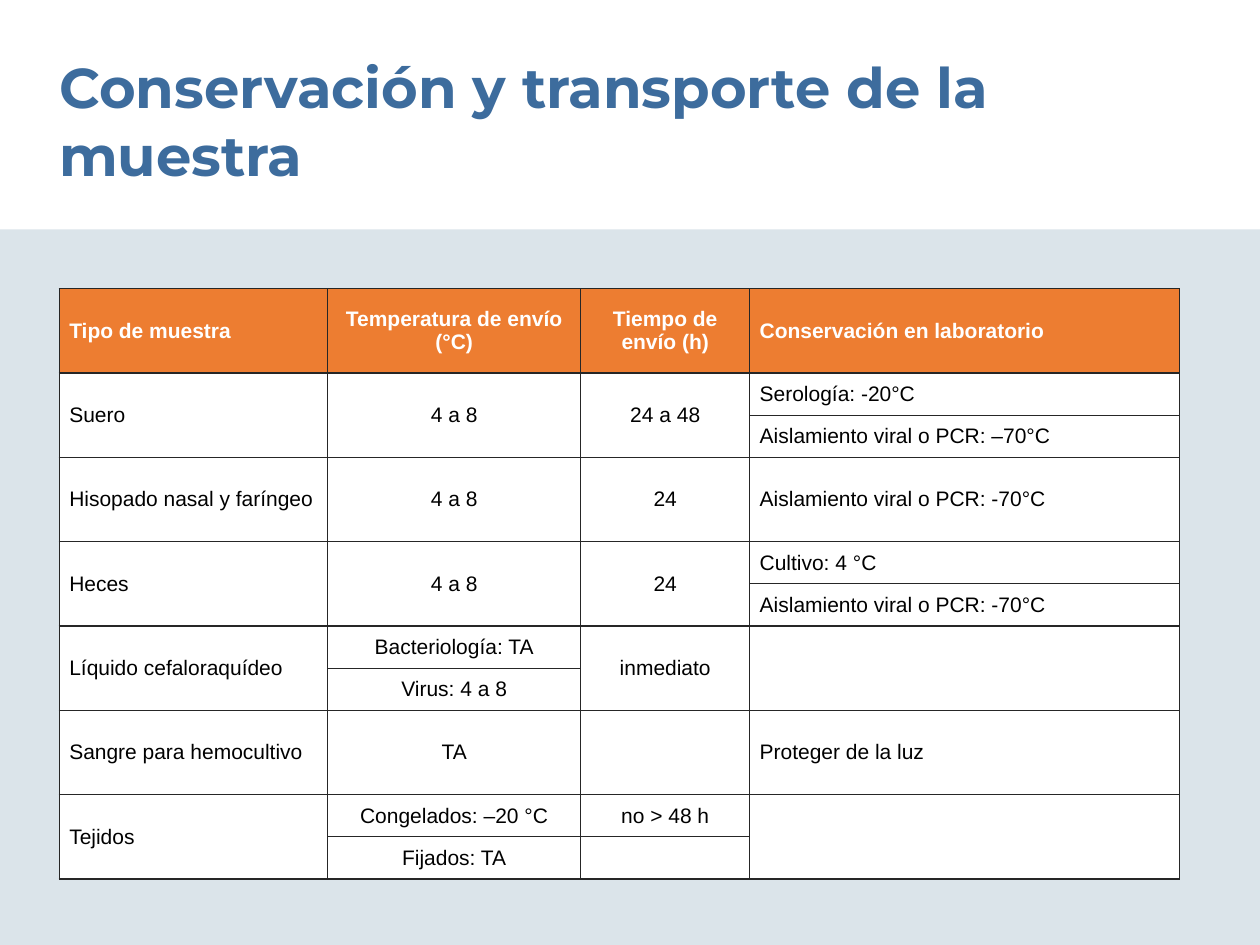
from dataclasses import dataclass

from lxml.etree import SubElement
from pptx import Presentation
from pptx.dml.color import RGBColor as Rgb
from pptx.enum.shapes import MSO_SHAPE as Shape
from pptx.enum.text import MSO_ANCHOR as Anchor, MSO_AUTO_SIZE as AutoSize, PP_ALIGN as Align
from pptx.oxml.ns import qn
from pptx.util import Inches, Pt


@dataclass(frozen=True)
class Theme:
    band: str = "DBE4EA"
    title: str = "3D6C9D"
    header: str = "ED7D31"
    paper: str = "FFFFFF"
    ink: str = "000000"
    border: str = "262626"
    title_font: str = "Montserrat"
    table_font: str = "Arial"
    title_size: float = 32
    table_size: float = 12
    border_width: float = 0.75


@dataclass(frozen=True)
class Sample:
    kind: str
    temperature: tuple[str, ...]
    time: tuple[str, ...]
    storage: tuple[str, ...]

    @property
    def columns(self) -> tuple[tuple[str, ...], ...]:
        return (self.kind,), self.temperature, self.time, self.storage

    @property
    def depth(self) -> int:
        return max(map(len, self.columns))


THEME = Theme()
HEADINGS = (
    "Tipo de muestra",
    "Temperatura de envío\n(°C)",
    "Tiempo de envío (h)",
    "Conservación en laboratorio",
)
SAMPLES = (
    Sample("Suero", ("4 a 8",), ("24 a 48",),
           ("Serología: -20°C", "Aislamiento viral o PCR: –70°C")),
    Sample("Hisopado nasal y faríngeo", ("4 a 8",), ("24",),
           ("Aislamiento viral o PCR: -70°C",)),
    Sample("Heces", ("4 a 8",), ("24",),
           ("Cultivo: 4 °C", "Aislamiento viral o PCR: -70°C")),
    Sample("Líquido cefaloraquídeo", ("Bacteriología: TA", "Virus: 4 a 8"),
           ("inmediato",), ("",)),
    Sample("Sangre para hemocultivo", ("TA",), ("",), ("Proteger de la luz",)),
    Sample("Tejidos", ("Congelados: –20 °C", "Fijados: TA"), ("no > 48 h", ""), ("",)),
)
COLUMN_WIDTHS = (2.13, 2.01, 1.34, 3.41)
ALIGNMENTS = (Align.LEFT, Align.CENTER, Align.CENTER, Align.LEFT)
LEFT = 0.47
ROW_HEIGHT = 0.67


def apply(target, formats: dict) -> None:
    for attribute, setting in formats.items():
        setattr(target, attribute, setting)


def style_font(font, name: str, size: float, color: str, bold: bool) -> None:
    apply(font, {"name": name, "size": Pt(size), "bold": bold})
    font.color.rgb = Rgb.from_string(color)


def add_borders(cell) -> None:
    properties = cell._tc.get_or_add_tcPr()
    for side in ("a:lnL", "a:lnR", "a:lnT", "a:lnB"):
        line = SubElement(properties, qn(side), w=str(Pt(THEME.border_width)))
        fill = SubElement(line, qn("a:solidFill"))
        SubElement(fill, qn("a:srgbClr"), val=THEME.border)


def style_cell(cell, alignment: Align, is_header: bool) -> None:
    add_borders(cell)
    cell.fill.solid()
    cell.fill.fore_color.rgb = Rgb.from_string(THEME.header if is_header else THEME.paper)
    apply(cell, {
        "vertical_anchor": Anchor.MIDDLE,
        "margin_left": Inches(0.08),
        "margin_right": Inches(0.08),
        "margin_top": Inches(0.05),
        "margin_bottom": Inches(0.05),
    })
    color = THEME.paper if is_header else THEME.ink
    for paragraph in cell.text_frame.paragraphs:
        paragraph.alignment = alignment
        for run in paragraph.runs:
            style_font(run.font, THEME.table_font, THEME.table_size, color, is_header)
        SubElement(paragraph._p, qn("a:endParaRPr"), sz=str(int(THEME.table_size * 100)))


def add_band(slide) -> None:
    band = slide.shapes.add_shape(
        Shape.RECTANGLE, 0, Inches(1.82), Inches(10), Inches(5.68))
    band.shadow.inherit = False
    band.fill.solid()
    band.fill.fore_color.rgb = Rgb.from_string(THEME.band)
    band.line.fill.background()


def add_title(slide, wording: str) -> None:
    title = slide.shapes.title
    apply(title, {"left": Inches(LEFT), "top": Inches(0.42),
                  "width": Inches(8.55), "height": Inches(1.08)})
    frame = title.text_frame
    frame.text = wording
    apply(frame, {"margin_left": 0, "margin_right": 0, "margin_top": 0, "margin_bottom": 0,
                  "word_wrap": True, "auto_size": AutoSize.NONE,
                  "vertical_anchor": Anchor.TOP})
    heading = frame.paragraphs[0]
    heading.alignment = Align.LEFT
    style_font(heading.runs[0].font, THEME.title_font, THEME.title_size, THEME.title, True)


def add_sample_table(slide) -> None:
    heights = [ROW_HEIGHT]
    for sample in SAMPLES:
        heights += [ROW_HEIGHT / sample.depth] * sample.depth
    table = slide.shapes.add_table(
        len(heights), len(HEADINGS), Inches(LEFT), Inches(2.29),
        Inches(sum(COLUMN_WIDTHS)), Inches(sum(heights))).table
    apply(table, {"first_row": False, "horz_banding": False})
    for column, width in zip(table.columns, COLUMN_WIDTHS):
        column.width = Inches(width)
    for row, height in zip(table.rows, heights):
        row.height = Inches(height)

    for column, heading in enumerate(HEADINGS):
        table.cell(0, column).text = heading
    top = 1
    for sample in SAMPLES:
        for column, entries in enumerate(sample.columns):
            for offset, entry in enumerate(entries):
                table.cell(top + offset, column).text = entry
            if len(entries) < sample.depth:
                table.cell(top, column).merge(table.cell(top + sample.depth - 1, column))
        top += sample.depth

    for index in range(len(heights)):
        for column, alignment in enumerate(ALIGNMENTS):
            style_cell(table.cell(index, column), alignment, index == 0)


def main() -> None:
    deck = Presentation()
    apply(deck, {"slide_width": Inches(10), "slide_height": Inches(7.5)})
    slide = deck.slides.add_slide(deck.slide_layouts[5])
    add_band(slide)
    add_title(slide, "Conservación y transporte de la muestra")
    add_sample_table(slide)
    deck.save("out.pptx")


if __name__ == "__main__":
    main()
